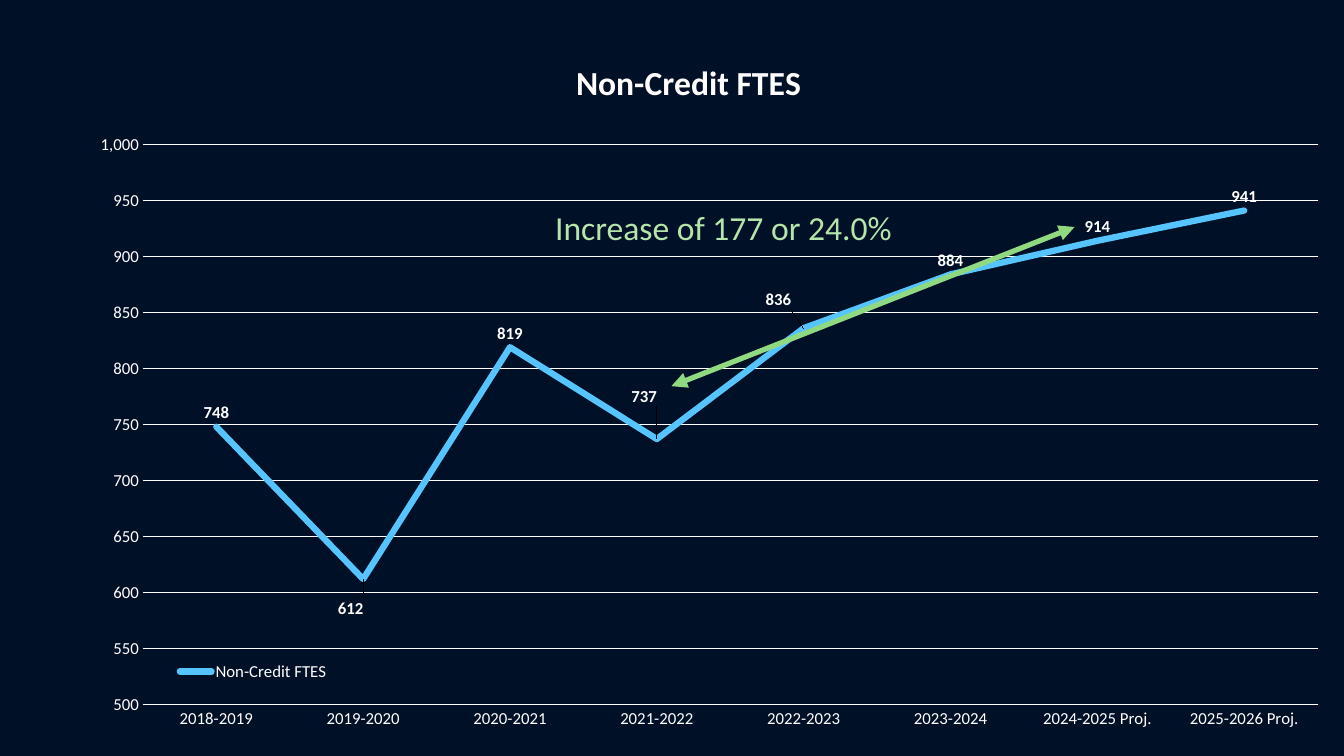
"""Build a slide with a line chart of non-credit FTES and its marked increase."""
from pptx import Presentation
from pptx.chart.data import CategoryChartData
from pptx.dml.color import RGBColor
from pptx.enum.chart import XL_CHART_TYPE, XL_LABEL_POSITION, XL_LEGEND_POSITION, XL_TICK_MARK
from pptx.enum.shapes import MSO_CONNECTOR
from pptx.enum.text import MSO_AUTO_SIZE
from pptx.oxml import parse_xml
from pptx.oxml.ns import nsdecls, qn
from pptx.util import Cm, Pt

TITLE = "Non-Credit FTES"
INCREASE = "Increase of 177 or 24.0%"
FTES = {
    "2018-2019": 748,
    "2019-2020": 612,
    "2020-2021": 819,
    "2021-2022": 737,
    "2022-2023": 836,
    "2023-2024": 884,
    "2024-2025 Proj.": 914,
    "2025-2026 Proj.": 941,
}
LABEL_SHIFTS = {1: (-0.01, 0.06), 3: (-0.01, -0.04), 4: (-0.02, -0.02)}

FONT = "Calibri"
NAVY = RGBColor(0x00, 0x10, 0x27)
WHITE = RGBColor(0xFF, 0xFF, 0xFF)
BLUE = RGBColor(0x56, 0xC5, 0xFF)
GREEN = RGBColor(0x8F, 0xDA, 0x81)
PALE_GREEN = RGBColor(0xB4, 0xE6, 0xAB)


def style_font(font, size, color=WHITE, bold=False):
    font.name = FONT
    font.size = Pt(size)
    font.bold = bold
    font.color.rgb = color


def style_line(line, color, width):
    line.color.rgb = color
    line.width = Pt(width)


def set_layout(element, index, **settings):
    for old in element.findall(qn("c:layout")):
        element.remove(old)
    parts = "".join(f'<c:{name} val="{value}"/>' for name, value in settings.items())
    element.insert(index, parse_xml(
        f'<c:layout {nsdecls("c")}><c:manualLayout>{parts}</c:manualLayout></c:layout>'))


def add_ftes_chart(page):
    data = CategoryChartData(number_format="#,##0")
    data.categories = list(FTES)
    data.add_series(TITLE, list(FTES.values()))
    chart = page.shapes.add_chart(
        XL_CHART_TYPE.LINE, Cm(1.27), Cm(0.64), Cm(31.95), Cm(18.19), data).chart
    style_font(chart.font, 10)

    chart.has_title = True
    title = chart.chart_title
    para = title.text_frame.paragraphs[0]
    para.text = TITLE
    style_font(para.font, 24, bold=True)
    set_layout(title._element, 1, xMode="edge", yMode="edge", x=0.41, y=0.04)

    chart.has_legend = True
    chart.legend.position = XL_LEGEND_POSITION.BOTTOM
    chart.legend.include_in_layout = False
    style_font(chart.legend.font, 12)
    set_layout(chart.legend._element, 1, xMode="edge", yMode="edge",
               x=0.09, y=0.87, w=0.14, h=0.05)

    for axis in (chart.category_axis, chart.value_axis):
        axis.major_tick_mark = axis.minor_tick_mark = XL_TICK_MARK.NONE
        style_font(axis.tick_labels.font, 12)
    style_line(chart.category_axis.format.line, WHITE, 0.75)
    values = chart.value_axis
    values.minimum_scale, values.maximum_scale, values.major_unit = 500, 1000, 50
    values.tick_labels.number_format = "#,##0"
    values.tick_labels.number_format_is_linked = False
    values.format.line.fill.background()
    style_line(values.major_gridlines.format.line, WHITE, 0.75)

    plot = chart.plots[0]
    plot.vary_by_categories = False
    set_layout(plot._element.getparent(), 0, layoutTarget="inner", xMode="edge",
               yMode="edge", x=0.073, y=0.165, w=0.927, h=0.776)
    series = plot.series[0]
    series.smooth = False
    style_line(series.format.line, BLUE, 4.5)
    series.format.line._get_or_add_ln().set("cap", "rnd")
    labels = series.data_labels
    labels.show_value = True
    labels.number_format = "#,##0"
    labels.number_format_is_linked = False
    labels.position = XL_LABEL_POSITION.ABOVE
    style_font(labels.font, 12, bold=True)
    for index, (across, down) in LABEL_SHIFTS.items():
        label = series.points[index].data_label
        label.position = XL_LABEL_POSITION.ABOVE
        style_font(label.font, 12, bold=True)
        element = labels._element.xpath(f'c:dLbl[c:idx/@val="{index}"]')[0]
        set_layout(element, 1, x=across, y=down)


def add_increase_arrow(page):
    arrow = page.shapes.add_connector(
        MSO_CONNECTOR.STRAIGHT, Cm(16.92), Cm(9.73), Cm(27.08), Cm(5.72))
    style_line(arrow.line, GREEN, 3.75)
    properties = arrow._element.spPr
    outline = properties.find(qn("a:ln"))
    for end in ("headEnd", "tailEnd"):
        outline.append(parse_xml(f'<a:{end} {nsdecls("a")} type="triangle"/>'))
    properties.append(parse_xml(f'<a:effectLst {nsdecls("a")}/>'))


def add_increase_note(page):
    frame = page.shapes.add_textbox(Cm(13.74), Cm(5.08), Cm(9.07), Cm(1.27)).text_frame
    frame.word_wrap = False
    frame.auto_size = MSO_AUTO_SIZE.SHAPE_TO_FIT_TEXT
    para = frame.paragraphs[0]
    para.text = INCREASE
    style_font(para.font, 24, PALE_GREEN)


def main():
    deck = Presentation()
    deck.slide_width, deck.slide_height = Cm(33.87), Cm(19.05)
    page = deck.slides.add_slide(deck.slide_layouts[6])
    page.background.fill.solid()
    page.background.fill.fore_color.rgb = NAVY
    add_ftes_chart(page)
    add_increase_arrow(page)
    add_increase_note(page)
    deck.save("out.pptx")


if __name__ == "__main__":
    main()
